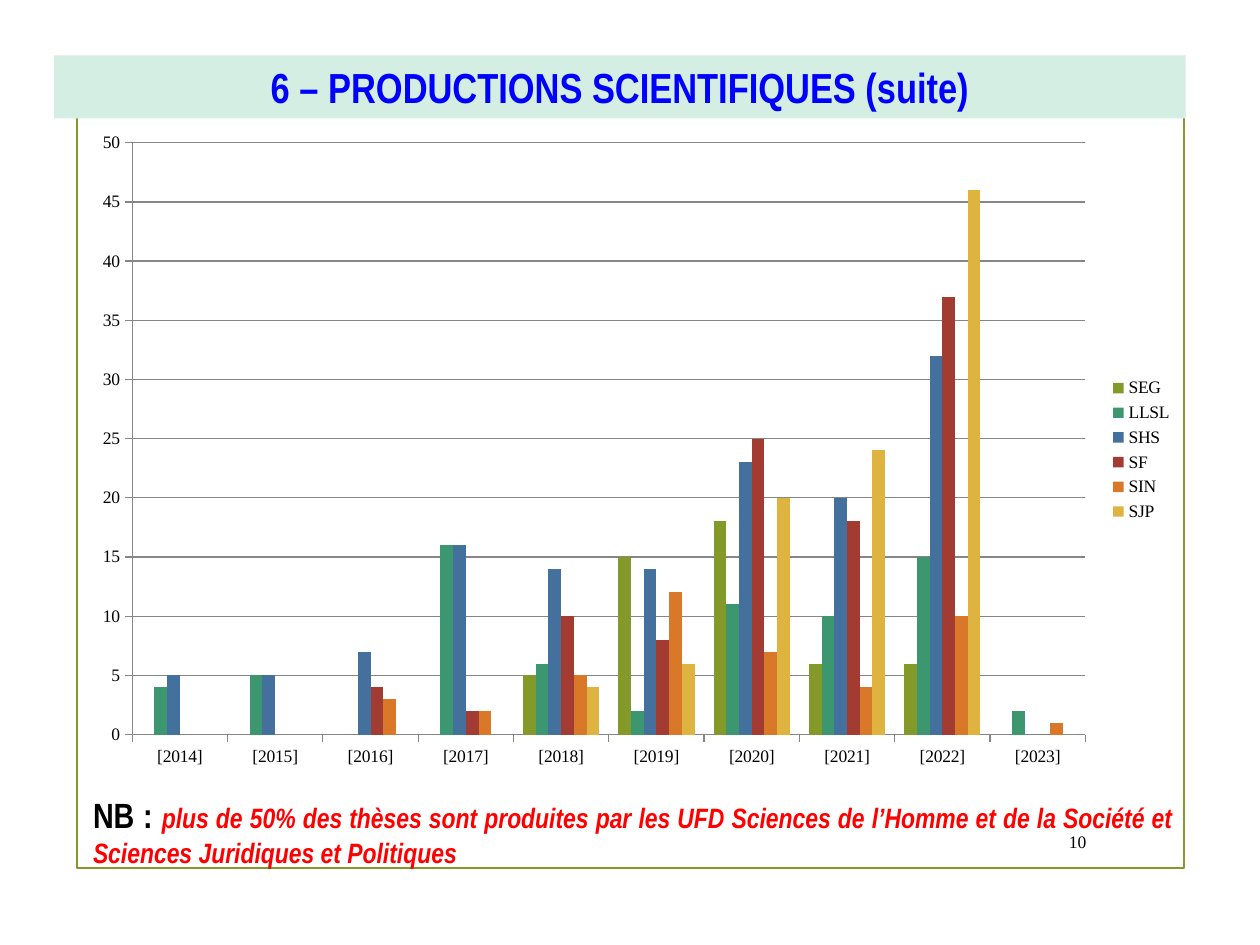
"""Build the slide on scientific output: a chart of theses per year and unit."""
from pptx import Presentation
from pptx.chart.data import CategoryChartData
from pptx.dml.color import RGBColor
from pptx.enum.chart import XL_CHART_TYPE as Kind, XL_LEGEND_POSITION as Spot, XL_TICK_MARK as Tick
from pptx.enum.shapes import MSO_SHAPE as Form
from pptx.enum.text import MSO_ANCHOR as Anchor, PP_ALIGN as Align
from pptx.util import Inches, Pt

TITLE = "6 – PRODUCTIONS SCIENTIFIQUES (suite)"
NOTE = [
    ("NB : ", dict(size=20, bold=True)),
    ("plus de 50% des thèses sont produites par les UFD Sciences de l’Homme "
     "et de la Société et Sciences Juridiques et Politiques",
     dict(size=16, bold=True, italic=True, color="FF0000")),
]
PAGE = "10"
YEARS = [f"[{year}]" for year in range(2014, 2024)]
UNITS = [
    ("SEG", "83992A", [0, 0, 0, 0, 5, 15, 18, 6, 6, 0]),
    ("LLSL", "3C9770", [4, 5, 0, 16, 6, 2, 11, 10, 15, 2]),
    ("SHS", "44709D", [5, 5, 7, 16, 14, 14, 23, 20, 32, 0]),
    ("SF", "A23C33", [None, None, 4, 2, 10, 8, 25, 18, 37, 0]),
    ("SIN", "D97828", [None, None, 3, 2, 5, 12, 7, 4, 10, 1]),
    ("SJP", "DEB340", [None, None, None, None, 4, 6, 20, 24, 46, 0]),
]
SANS, SERIF = "Arial Narrow", "Times New Roman"


def rgb(code):
    return RGBColor.from_string(code)


def style(font, size=10, face=SANS, color="000000", bold=False, italic=False):
    font.size, font.name = Pt(size), face
    font.bold, font.italic = bold, italic
    font.color.rgb = rgb(color)


def write(shape, runs, align, anchor=Anchor.MIDDLE):
    frame = shape.text_frame
    frame.word_wrap = True
    frame.vertical_anchor = anchor
    para = frame.paragraphs[0]
    para.alignment = align
    for text, form in runs:
        run = para.add_run()
        run.text = text
        style(run.font, **form)


def add_box(shapes, place, fill=None, line=None):
    box = shapes.add_shape(Form.RECTANGLE, *map(Inches, place))
    box.shadow.inherit = False
    if fill:
        box.fill.solid()
        box.fill.fore_color.rgb = rgb(fill)
    else:
        box.fill.background()
    if line:
        box.line.color.rgb = rgb(line)
        box.line.width = Pt(1.25)
    else:
        box.line.fill.background()
    return box


def add_graph(shapes, place):
    data = CategoryChartData()
    data.categories = YEARS
    for name, _, vals in UNITS:
        data.add_series(name, vals)
    chart = shapes.add_chart(Kind.COLUMN_CLUSTERED, *map(Inches, place), data).chart
    style(chart.font, face=SERIF)
    chart.has_title = False
    chart.has_legend = True
    chart.legend.position = Spot.RIGHT
    chart.legend.include_in_layout = False
    plot = chart.plots[0]
    plot.gap_width, plot.overlap = 150, 0
    plot.vary_by_categories = False
    for series, (_, color, _) in zip(plot.series, UNITS):
        series.format.fill.solid()
        series.format.fill.fore_color.rgb = rgb(color)
        series.invert_if_negative = False
    rows = chart.value_axis
    rows.minimum_scale, rows.maximum_scale, rows.major_unit = 0, 50, 5
    rows.has_major_gridlines = True
    for axis in (rows, chart.category_axis):
        axis.major_tick_mark = Tick.OUTSIDE
        axis.minor_tick_mark = Tick.NONE
    for part in (rows, chart.category_axis, rows.major_gridlines):
        part.format.line.color.rgb = rgb("868686")
        part.format.line.width = Pt(0.75)


def main():
    deck = Presentation()
    deck.slide_width, deck.slide_height = Inches(10), Inches(7.5)
    shapes = deck.slides.add_slide(deck.slide_layouts[6]).shapes
    add_box(shapes, (0.61, 0.59, 8.79, 6.3), line="83992A")
    page = shapes.add_textbox(*map(Inches, (8.29, 6.52, 0.43, 0.31)))
    write(page, [(PAGE, dict(face=SERIF))], Align.RIGHT)
    head = add_box(shapes, (0.43, 0.44, 8.98, 0.5), fill="D4EEE3")
    write(head, [(TITLE, dict(size=24, bold=True, color="0000FF"))], Align.CENTER, Anchor.TOP)
    note = shapes.add_textbox(*map(Inches, (0.64, 6.24, 8.77, 0.71)))
    write(note, NOTE, Align.JUSTIFY)
    add_graph(shapes, (0.64, 0.95, 8.77, 5.24))
    deck.save("out.pptx")


if __name__ == "__main__":
    main()
